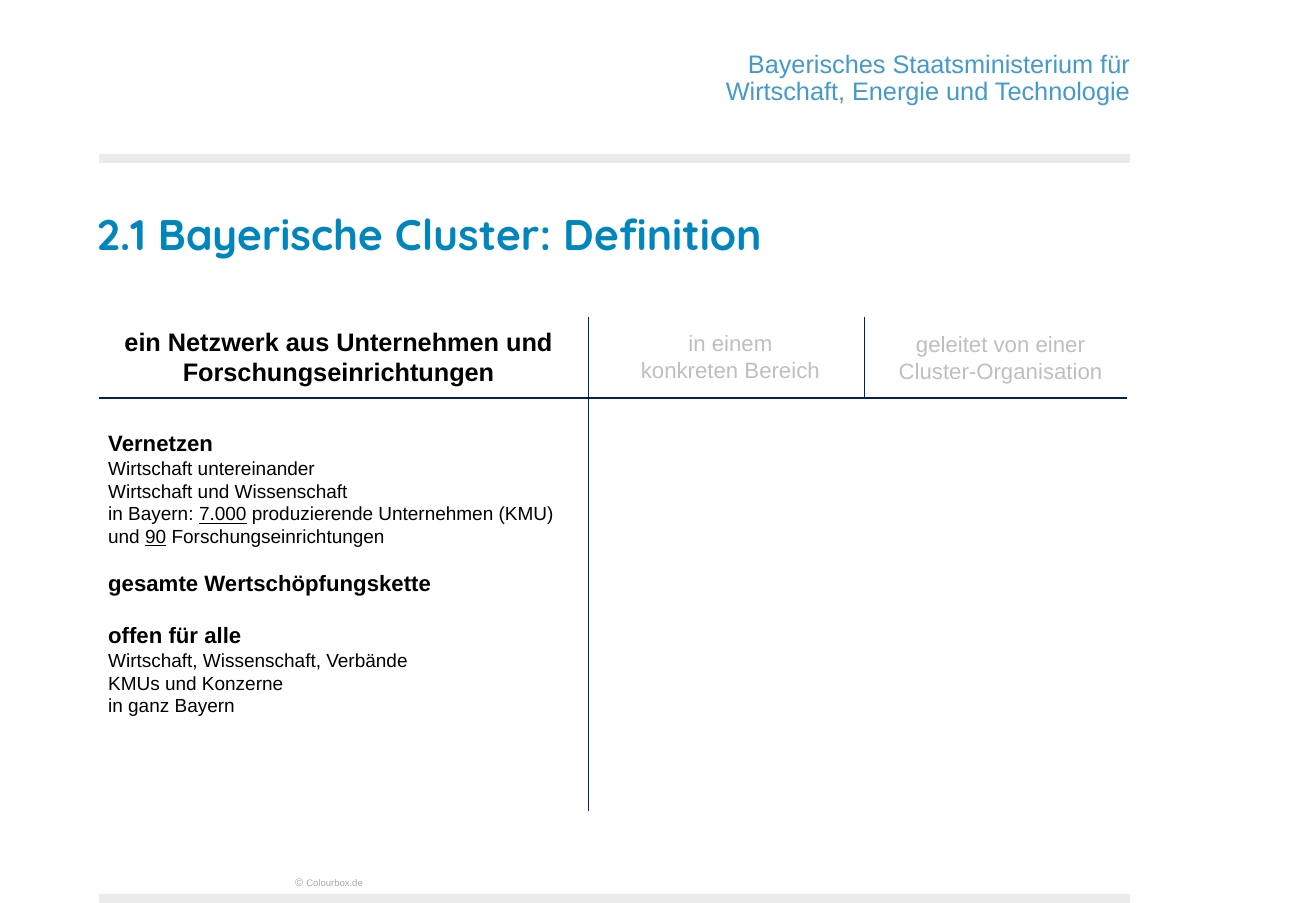
"""Builds the slide that defines the Bavarian clusters."""
from lxml import etree
from pptx import Presentation
from pptx.dml.color import RGBColor
from pptx.enum.shapes import MSO_CONNECTOR, MSO_SHAPE
from pptx.enum.text import MSO_ANCHOR, PP_ALIGN
from pptx.oxml.ns import qn
from pptx.util import Inches, Pt

LEFT, CENTER, RIGHT = PP_ALIGN.LEFT, PP_ALIGN.CENTER, PP_ALIGN.RIGHT
TOP, MIDDLE, BOTTOM = MSO_ANCHOR.TOP, MSO_ANCHOR.MIDDLE, MSO_ANCHOR.BOTTOM
STRAIGHT, RECTANGLE = MSO_CONNECTOR.STRAIGHT, MSO_SHAPE.RECTANGLE

BLACK = RGBColor(0x00, 0x00, 0x00)
NAVY = RGBColor(0x00, 0x20, 0x60)
SKY = RGBColor(0x43, 0x9A, 0xCB)
BLUE = RGBColor(0x00, 0x86, 0xBC)
BAR_GREY = RGBColor(0xEB, 0xEB, 0xEB)
PALE_GREY = RGBColor(0xBF, 0xBF, 0xBF)
CREDIT_GREY = RGBColor(0xA6, 0xA6, 0xA6)

WIDTH, HEIGHT = 11.54, 7.92
LEFT_EDGE, RIGHT_EDGE = 0.87, 9.91
BAR_HEIGHT = 0.08
BAR_TOPS = (1.35, HEIGHT - BAR_HEIGHT)
TABLE_TOP, HEAD_BOTTOM, TABLE_BOTTOM = 2.78, 3.49, 7.11
FIRST_DIVIDER, SECOND_DIVIDER, TABLE_RIGHT = 5.16, 7.58, 9.88

MINISTRY = ["Bayerisches Staatsministerium für", "Wirtschaft, Energie und Technologie"]
TITLE = ["2.1 Bayerische Cluster: Definition"]
HEADINGS = [
    ("ein Netzwerk aus Unternehmen und Forschungseinrichtungen",
     (LEFT_EDGE, 2.81, 4.2, 0.64), {"size": 16, "bold": True}),
    ("in einem\nkonkreten Bereich", (5.3, 2.84, 2.21, 0.57), {"size": 14, "color": PALE_GREY}),
    ("geleitet von einer Cluster-Organisation",
     (7.71, 2.85, 2.13, 0.57), {"size": 14, "color": PALE_GREY}),
]
TOPICS = [
    ("Vernetzen", 0, [
        "Wirtschaft untereinander",
        "Wirtschaft und Wissenschaft",
        [("in Bayern: ", {}), ("7.000", {"underline": True}),
         (" produzierende Unternehmen (KMU)\nund ", {}), ("90", {"underline": True}),
         (" Forschungseinrichtungen", {})],
    ]),
    ("gesamte Wertschöpfungskette", 14, []),
    ("offen für alle", 16, [
        "Wirtschaft, Wissenschaft, Verbände", "KMUs und Konzerne", "in ganz Bayern",
    ]),
]
CREDIT = [[("© ", {"size": 7}), ("Colourbox.de", {})]]


def add_spans(para, spans, size, bold):
    for text, style in spans:
        for index, line in enumerate(text.split("\n")):
            if index:
                para.add_line_break()
            span = para.add_run()
            span.text = line
            span.font.size = Pt(style.get("size", size))
            span.font.bold = bold
            span.font.underline = style.get("underline")


def add_text(page, frame, paragraphs, size=12, color=BLACK, font="Arial", bold=False,
             align=LEFT, anchor=TOP, inset=(0.1, 0.05), spacing=None):
    box = page.shapes.add_textbox(*map(Inches, frame))
    body = box.text_frame
    body.word_wrap = True
    body.vertical_anchor = anchor
    body.margin_left = body.margin_right = Inches(inset[0])
    body.margin_top = body.margin_bottom = Inches(inset[1])
    for index, entry in enumerate(paragraphs):
        spans, style = entry if isinstance(entry, tuple) else (entry, {})
        if isinstance(spans, str):
            spans = [(spans, {})]
        para = body.add_paragraph() if index else body.paragraphs[0]
        para.alignment = align
        para.line_spacing = spacing
        if style.get("before"):
            para.space_before = Pt(style["before"])
        add_spans(para, spans, style.get("size", size), style.get("bold", bold))
        for span in para.runs:
            span.font.name = font
            span.font.color.rgb = color


def add_bar(page, top):
    bar = page.shapes.add_shape(
        RECTANGLE, Inches(LEFT_EDGE), Inches(top),
        Inches(RIGHT_EDGE - LEFT_EDGE), Inches(BAR_HEIGHT))
    bar.shadow.inherit = False
    bar.fill.solid()
    bar.fill.fore_color.rgb = BAR_GREY
    bar.line.fill.background()


def add_rule(page, ends):
    rule = page.shapes.add_connector(STRAIGHT, *map(Inches, ends))
    rule.line.color.rgb = NAVY
    rule.line.width = Pt(1)
    etree.SubElement(rule.element.spPr, qn("a:effectLst"))


def topic_paragraphs():
    paragraphs = []
    for heading, before, details in TOPICS:
        paragraphs.append((heading, {"size": 14, "bold": True, "before": before}))
        paragraphs.extend(details)
    return paragraphs


def main():
    deck = Presentation()
    deck.slide_width, deck.slide_height = Inches(WIDTH), Inches(HEIGHT)
    page = deck.slides.add_slide(deck.slide_layouts[6])

    add_text(page, (0.18, 0.45, RIGHT_EDGE - 0.18, 0.48), MINISTRY, size=16, color=SKY,
             align=RIGHT, anchor=BOTTOM, inset=(0, 0), spacing=Pt(17.1))
    for top in BAR_TOPS:
        add_bar(page, top)
    add_text(page, (0.85, 1.75, 8.66, 0.59), TITLE, size=27, color=BLUE,
             font="Quicksand", bold=True, anchor=MIDDLE, inset=(0, 0))

    for ends in (
        (FIRST_DIVIDER, TABLE_BOTTOM, FIRST_DIVIDER, TABLE_TOP),
        (SECOND_DIVIDER, HEAD_BOTTOM, SECOND_DIVIDER, TABLE_TOP),
        (LEFT_EDGE, HEAD_BOTTOM, TABLE_RIGHT, HEAD_BOTTOM),
    ):
        add_rule(page, ends)
    for text, frame, style in HEADINGS:
        add_text(page, frame, [text], align=CENTER, **style)

    add_text(page, (2.37, 7.63, 1.03, 0.22), CREDIT, size=6, color=CREDIT_GREY, align=CENTER)
    add_text(page, (0.85, 3.72, 4.22, 2.66), topic_paragraphs())
    deck.save("out.pptx")


if __name__ == "__main__":
    main()
